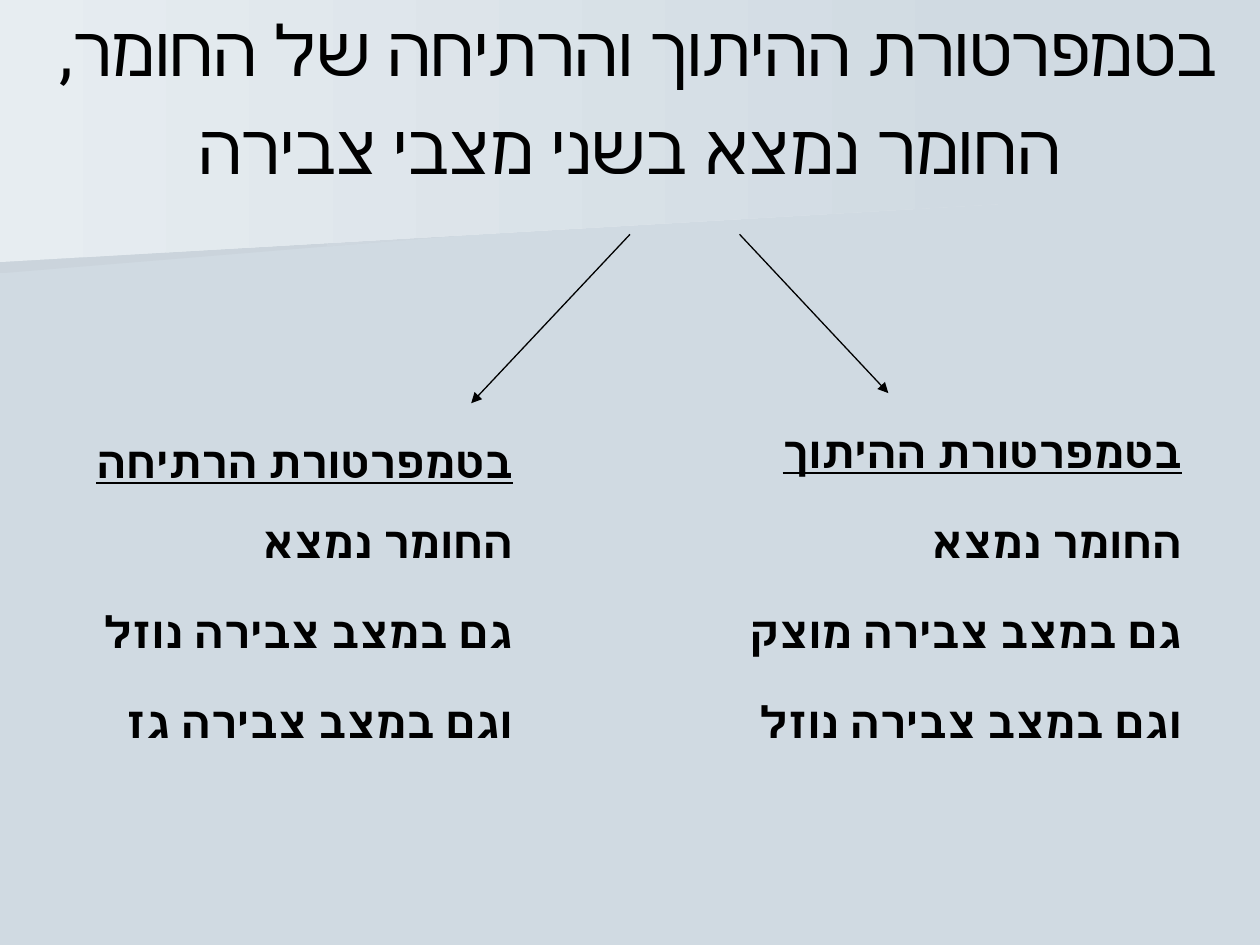
import pptx
import pptx.dml.color
import pptx.enum.shapes
import pptx.enum.text
import pptx.oxml
import pptx.oxml.ns
import pptx.util
from dataclasses import dataclass
from lxml import etree

Inches = pptx.util.Inches
RGB = pptx.dml.color.RGBColor.from_string
ALIGN = pptx.enum.text.PP_ALIGN
qn = pptx.oxml.ns.qn


@dataclass(frozen=True)
class Theme:
    font: str = "Roboto"
    background: str = "D0DAE2"
    shade: str = "CBD4DC"
    light: str = "E7EDF1"
    ink: str = "000000"
    title_size: int = 40
    body_size: int = 25
    line_width: float = 0.75


THEME = Theme()


def add_band(slide, points, start_color):
    """Outline that fades from start_color into the background."""
    corners = [(Inches(x), Inches(y)) for x, y in points]
    builder = slide.shapes.build_freeform(*corners[0], scale=1.0)
    builder.add_line_segments(corners[1:], close=True)
    s = builder.convert_to_shape()
    s.shadow.inherit = False
    s.line.fill.background()
    s.fill.gradient()
    s.fill.gradient_angle = 0
    for stop, color in zip(s.fill.gradient_stops, (start_color, THEME.background)):
        stop.color.rgb = RGB(color)


def set_space_before(p, percent):
    """Space before as a share of the type size."""
    space = p._p.get_or_add_pPr()._add_spcBef()
    etree.SubElement(space, qn("a:spcPct")).set("val", str(percent * 1000))


def add_hebrew_text(slide, box, lines, size, align, space_before,
                    line_spacing=None, bold=False, underline=False):
    """Right-to-left text box with one paragraph per line."""
    s = slide.shapes.add_textbox(*[Inches(v) for v in box])
    tf = s.text_frame
    tf.word_wrap = True
    tf.text = "\n".join(lines)
    for p in tf.paragraphs:
        p.alignment = align
        p._p.get_or_add_pPr().set("rtl", "1")
        if line_spacing:
            p.line_spacing = line_spacing
        set_space_before(p, space_before)
        for r in p.runs:
            r.font.name = THEME.font
            r.font.size = pptx.util.Pt(size)
            r.font.bold = bold
            r.font.underline = underline
            r.font.color.rgb = RGB(THEME.ink)
            # Hebrew takes the complex-script font
            etree.SubElement(r._r.get_or_add_rPr(), qn("a:cs")).set("typeface", THEME.font)


def add_column(slide, left, heading_top, heading, lines):
    """Underlined heading above its description."""
    width, body_top = 4.17, 3.91
    style = dict(size=THEME.body_size, align=ALIGN.RIGHT, space_before=50,
                 line_spacing=1.3, bold=True)
    add_hebrew_text(slide, (left, body_top, width, 2.14), lines, **style)
    add_hebrew_text(slide, (left, heading_top, width, 0.64), [heading],
                    underline=True, **style)


def add_arrow(slide, start, end):
    s = slide.shapes.add_connector(pptx.enum.shapes.MSO_CONNECTOR.STRAIGHT,
                                   *[Inches(v) for v in start + end])
    s.line.color.rgb = RGB(THEME.ink)
    s.line.width = pptx.util.Pt(THEME.line_width)
    etree.SubElement(s.line._get_or_add_ln(), qn("a:tailEnd")).set("type", "triangle")
    etree.SubElement(s._element.spPr, qn("a:effectLst"))


def main():
    prs = pptx.Presentation()
    prs.slide_width, prs.slide_height = Inches(10), Inches(7.5)
    slide = prs.slides.add_slide(prs.slide_layouts[6])

    # Background with two fading bands
    slide.background.fill.solid()
    slide.background.fill.fore_color.rgb = RGB(THEME.background)
    add_band(slide, [(7.78, 1.53), (0, 2.17), (0, 1.01), (7.79, 1.01), (7.78, 1.28)],
             THEME.shade)
    add_band(slide, [(7.92, 1.62), (0, 2.08), (0, 0), (7.92, 0)], THEME.light)

    # Title
    add_hebrew_text(slide, (0, 0, 10, 1.8),
                    ["בטמפרטורת ההיתוך והרתיחה של החומר, ", "החומר נמצא בשני מצבי צבירה"],
                    THEME.title_size, ALIGN.CENTER, space_before=20)

    # Arrows to the two cases
    add_arrow(slide, (5.87, 1.86), (7.05, 3.12))
    add_arrow(slide, (5, 1.86), (3.74, 3.2))

    # Melting on the right, boiling on the left
    add_column(slide, 5.31, 3.2, "בטמפרטורת ההיתוך",
               ["החומר נמצא", "גם במצב צבירה מוצק", "וגם במצב צבירה נוזל"])
    add_column(slide, 0, 3.28, "בטמפרטורת הרתיחה",
               ["החומר נמצא", "גם במצב צבירה נוזל", "וגם במצב צבירה גז"])

    prs.save("out.pptx")


if __name__ == "__main__":
    main()
